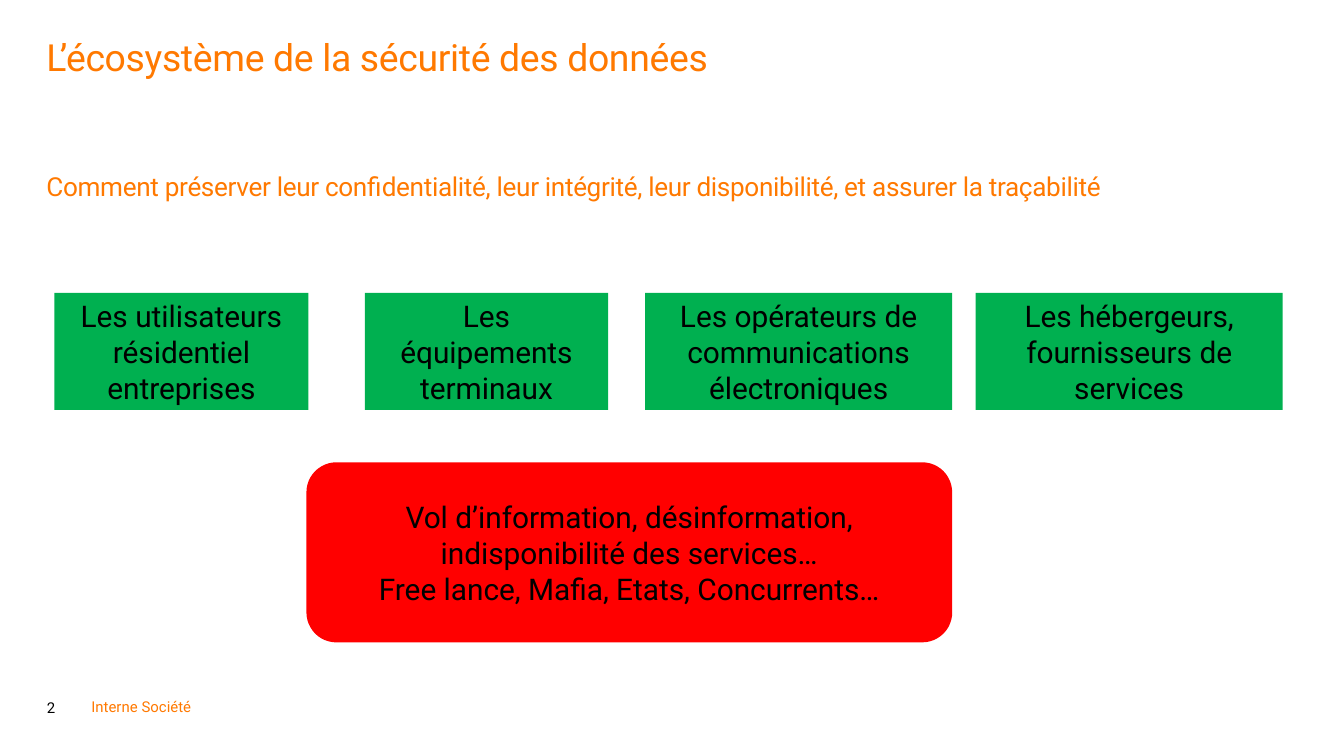
from pptx import Presentation
from pptx.dml.color import RGBColor
from pptx.enum.shapes import MSO_SHAPE
from pptx.enum.text import MSO_ANCHOR, MSO_AUTO_SIZE, PP_ALIGN
from pptx.util import Pt

PX = 4572
FONT = "Roboto"
COLORS = {
    "accent": "FF7900",
    "actor": "00B050",
    "threat": "FF0000",
    "text": "000000",
    "background": "FFFFFF",
}


def color(name):
    return RGBColor.from_string(COLORS[name])


def emu(box):
    return [length * PX for length in box]


def format_text(shape, lines, size, color_name, align=PP_ALIGN.LEFT,
                anchor=MSO_ANCHOR.TOP, line_spacing=None, tracking=None):
    frame = shape.text_frame
    frame.text = "\n".join(lines)
    frame.word_wrap = True
    frame.auto_size = MSO_AUTO_SIZE.NONE
    frame.vertical_anchor = anchor
    for paragraph in frame.paragraphs:
        paragraph.alignment = align
        if line_spacing:
            paragraph.line_spacing = line_spacing
        for run in paragraph.runs:
            run.font.name = FONT
            run.font.size = Pt(size)
            run.font.color.rgb = color(color_name)
            if tracking:
                run.font._element.set("spc", str(tracking))


def remove_margins(shape):
    frame = shape.text_frame
    frame.margin_left = frame.margin_right = 0
    frame.margin_top = frame.margin_bottom = 0


def add_label(slide, box, text, size, color_name, **options):
    label = slide.shapes.add_textbox(*emu(box))
    remove_margins(label)
    format_text(label, [text], size, color_name, **options)
    return label


def add_block(slide, kind, box, lines, fill):
    block = slide.shapes.add_shape(kind, *emu(box))
    block.shadow.inherit = False
    block.fill.solid()
    block.fill.fore_color.rgb = color(fill)
    block.line.fill.background()
    format_text(block, lines, 16, "text", PP_ALIGN.CENTER, MSO_ANCHOR.MIDDLE)


def add_heading(slide, box, title_text, question):
    left, top, width, height = box
    title = slide.shapes.title
    title.left, title.top, title.width, title.height = emu((left, top, width, 162))
    remove_margins(title)
    format_text(title, [title_text], 20, "accent", line_spacing=0.9, tracking=-20)
    subtitle = add_label(slide, (left, top + 201, width, height - 201), question,
                         14, "accent", line_spacing=0.9, tracking=-20)
    subtitle.text_frame.paragraphs[0].space_before = Pt(6)


def add_actors(slide, box):
    left, top, width, height = box
    actors = [
        (0, 378, ["Les utilisateurs", "résidentiel", "entreprises"]),
        (462, 362, ["Les équipements terminaux"]),
        (879, 457, ["Les opérateurs de communications électroniques"]),
        (width - 457, 457, ["Les hébergeurs, fournisseurs de services"]),
    ]
    for offset, actor_width, lines in actors:
        add_block(slide, MSO_SHAPE.RECTANGLE,
                  (left + offset, top, actor_width, height), lines, "actor")


def add_threats(slide, box):
    lines = [
        "Vol d’information, désinformation, indisponibilité des services…",
        "Free lance, Mafia, Etats, Concurrents…",
    ]
    add_block(slide, MSO_SHAPE.ROUNDED_RECTANGLE, box, lines, "threat")


def add_footer(slide, box):
    left, top, width, height = box
    number = add_label(slide, (left, top, 60, height), "2", 8, "text",
                       anchor=MSO_ANCHOR.BOTTOM, line_spacing=0.85)
    number.text_frame.margin_left = 2 * PX
    add_label(slide, (left + 68, top + 46, width - 68, 26),
              "Interne Société", 8, "accent")


def main():
    presentation = Presentation()
    presentation.slide_width, presentation.slide_height = emu((2000, 1125))
    slide = presentation.slides.add_slide(presentation.slide_layouts[5])
    slide.background.fill.solid()
    slide.background.fill.fore_color.rgb = color("background")
    add_heading(slide, (69, 58, 1862, 938), "L’écosystème de la sécurité des données",
                "Comment préserver leur confidentialité, leur intégrité, "
                "leur disponibilité, et assurer la traçabilité")
    add_actors(slide, (81, 436, 1828, 174))
    add_threats(slide, (456, 688, 961, 268))
    add_footer(slide, (68, 992, 230, 74))
    presentation.save("out.pptx")


if __name__ == "__main__":
    main()
